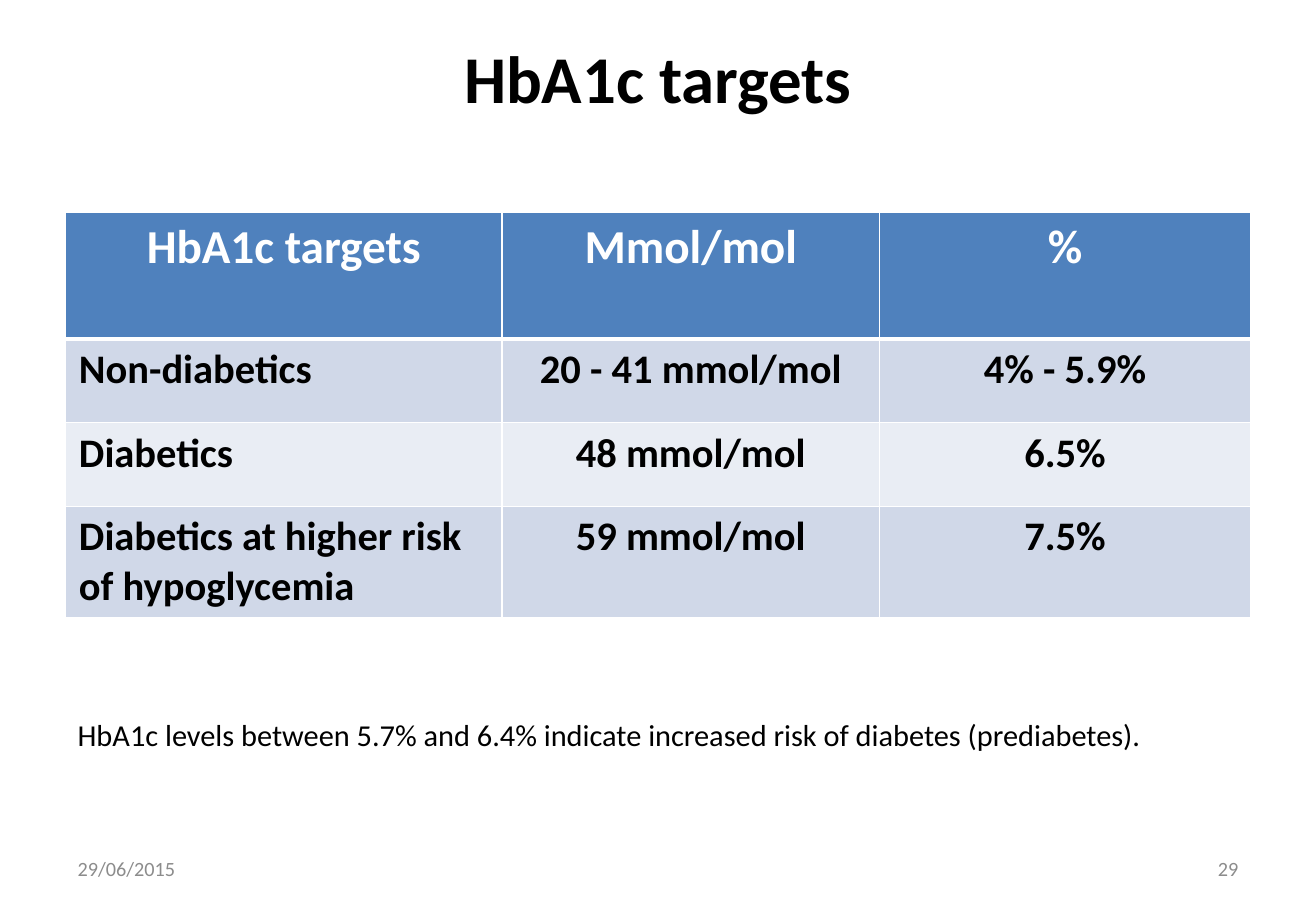
from dataclasses import dataclass

from lxml import etree
from pptx import Presentation
from pptx import util as u
from pptx.dml.color import RGBColor
from pptx.enum import text
from pptx.oxml import ns

FONT = "Calibri"
COLOURS = {
    "black": "000000",
    "white": "FFFFFF",
    "grey": "8C8C8C",
    "header": "4F81BD",
    "odd_row": "D0D8E8",
    "even_row": "E9EDF4",
}
LEFT, WIDTH = 0.54, 9.75
COLUMN_WIDTHS = [3.59, 3.11, 3.05]
ROW_HEIGHTS = [1.04, 0.69, 0.69, 0.91]
TARGETS = [
    ["HbA1c targets", "Mmol/mol", "%"],
    ["Non-diabetics", "20 - 41 mmol/mol", "4% - 5.9%"],
    ["Diabetics", "48 mmol/mol", "6.5%"],
    ["Diabetics at higher risk of hypoglycemia", "59 mmol/mol", "7.5%"],
]


@dataclass
class Label:
    words: str
    left: float
    top: float
    width: float
    size: float = 12
    colour: str = "grey"
    align: text.PP_ALIGN = text.PP_ALIGN.LEFT
    anchor: text.MSO_ANCHOR = text.MSO_ANCHOR.MIDDLE


LABELS = [
    Label("29/06/2015", LEFT, 6.95, 2.53),
    Label(
        "HbA1c levels between 5.7% and 6.4% indicate increased risk of diabetes (prediabetes).",
        LEFT, 5.85, WIDTH, size=18, colour="black", anchor=text.MSO_ANCHOR.TOP,
    ),
    Label("29", 7.76, 6.95, 2.53, align=text.PP_ALIGN.RIGHT),
]


def write(frame, words: str, *, size: float, colour: str = "black",
          bold: bool = False, align: text.PP_ALIGN = text.PP_ALIGN.LEFT) -> None:
    frame.word_wrap = True
    paragraph = frame.paragraphs[0]
    paragraph.text = words
    paragraph.alignment = align
    font = paragraph.runs[0].font
    font.name = FONT
    font.size = u.Pt(size)
    font.bold = bold
    font.color.rgb = RGBColor.from_string(COLOURS[colour])


def add_label(slide, label: Label) -> None:
    box = slide.shapes.add_textbox(
        *map(u.Inches, (label.left, label.top, label.width, 0.4)))
    box.text_frame.vertical_anchor = label.anchor
    write(box.text_frame, label.words, size=label.size,
          colour=label.colour, align=label.align)


def set_borders(cell, top: float, bottom: float) -> None:
    properties = cell._tc.get_or_add_tcPr()
    widths = {"a:lnL": 1, "a:lnR": 1, "a:lnT": top, "a:lnB": bottom}
    for position, (tag, width) in enumerate(widths.items()):
        line = etree.Element(ns.qn(tag), w=str(u.Pt(width)))
        fill = etree.SubElement(line, ns.qn("a:solidFill"))
        etree.SubElement(fill, ns.qn("a:srgbClr"), val=COLOURS["white"])
        properties.insert(position, line)


def format_cell(cell, words: str, row: int, column: int) -> None:
    header = row == 0
    fill = "header" if header else "odd_row" if row % 2 else "even_row"
    cell.fill.solid()
    cell.fill.fore_color.rgb = RGBColor.from_string(COLOURS[fill])
    cell.margin_left = cell.margin_right = u.Inches(0.11)
    centred = header or column > 0
    write(cell.text_frame, words, size=28 if header else 24,
          colour="white" if header else "black", bold=True,
          align=text.PP_ALIGN.CENTER if centred else text.PP_ALIGN.LEFT)
    set_borders(cell, top=3 if row == 1 else 1, bottom=3 if header else 1)


def add_targets(slide) -> None:
    table = slide.shapes.add_table(
        len(ROW_HEIGHTS), len(COLUMN_WIDTHS),
        *map(u.Inches, (LEFT, 1.75, WIDTH, sum(ROW_HEIGHTS)))).table
    for column, width in zip(table.columns, COLUMN_WIDTHS):
        column.width = u.Inches(width)
    for row, height in zip(table.rows, ROW_HEIGHTS):
        row.height = u.Inches(height)
    for row, values in enumerate(TARGETS):
        for column, words in enumerate(values):
            format_cell(table.cell(row, column), words, row, column)


def add_title(slide) -> None:
    title = slide.shapes.title
    title.left, title.top, title.width, title.height = map(
        u.Inches, (LEFT, 0.3, WIDTH, 1.25))
    frame = title.text_frame
    frame.auto_size = text.MSO_AUTO_SIZE.NONE
    frame.vertical_anchor = text.MSO_ANCHOR.TOP
    frame.margin_top = 0
    write(frame, "HbA1c targets", size=39.6, bold=True, align=text.PP_ALIGN.CENTER)


def main() -> None:
    presentation = Presentation()
    presentation.slide_width = u.Inches(10.83)
    presentation.slide_height = u.Inches(7.5)
    slide = presentation.slides.add_slide(presentation.slide_layouts[5])
    add_title(slide)
    add_targets(slide)
    for label in LABELS:
        add_label(slide, label)
    presentation.save("out.pptx")


if __name__ == "__main__":
    main()
